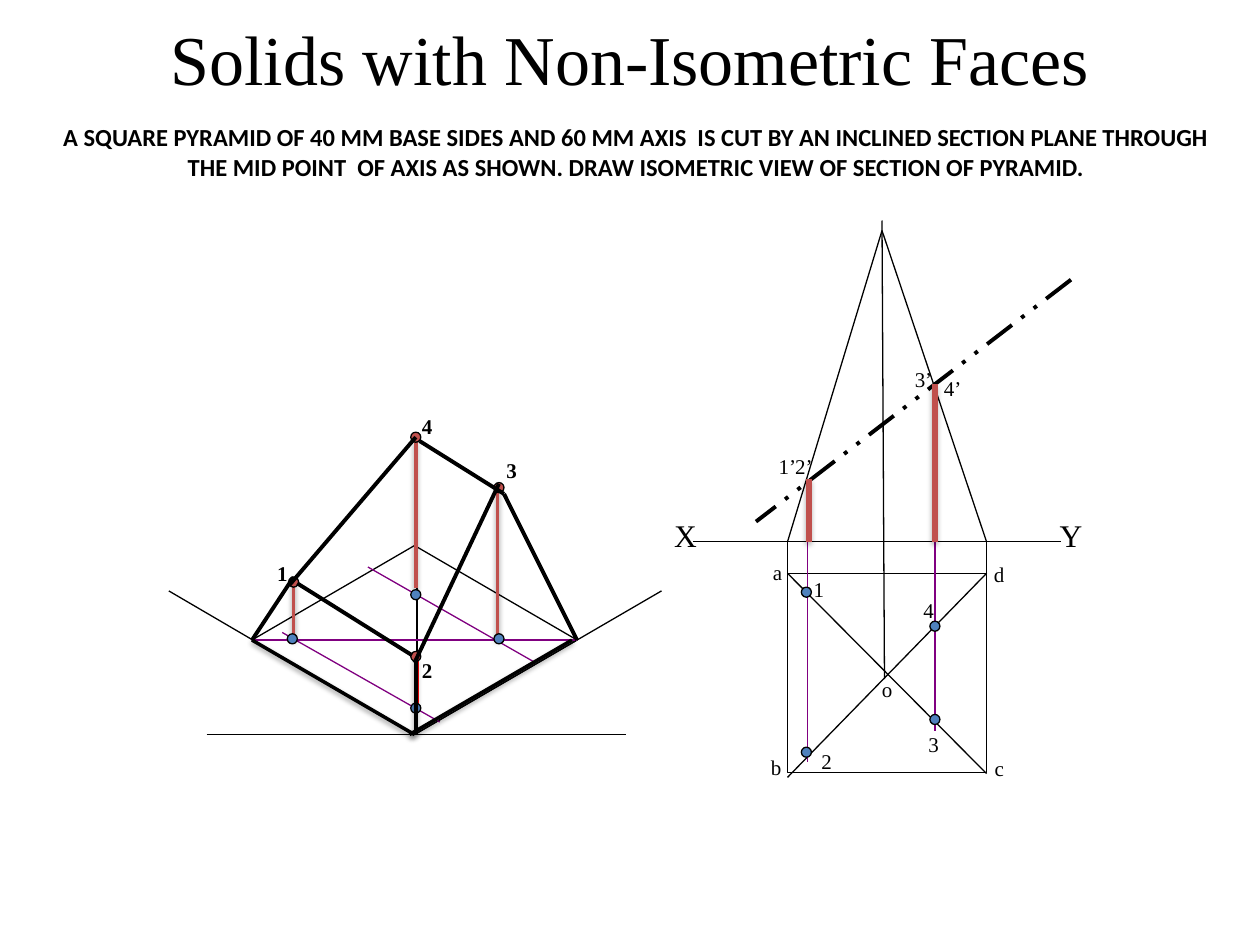
from lxml import etree
from pptx import Presentation
from pptx.dml.color import RGBColor
from pptx.enum import dml, shapes, text
from pptx.oxml.ns import qn
from pptx.util import Inches, Pt

colour = RGBColor.from_string
BLACK, WHITE, PURPLE, RED, BLUE = "000000", "FFFFFF", "800080", "C0504D", "4F81BD"
SERIF = "Times New Roman"

deck = Presentation()
deck.slide_width, deck.slide_height = Inches(10), Inches(7.5)
page = deck.slides.add_slide(deck.slide_layouts[5])


def draw_line(ends, hue=BLACK, width=0.75, shadow=None):
    """Draw a straight line; shadow is (opacity %, blur pt, distance pt)."""
    line = page.shapes.add_connector(
        shapes.MSO_CONNECTOR.STRAIGHT, *[Inches(value) for value in ends])
    line.line.color.rgb = colour(hue)
    line.line.width = Pt(width)
    effects = etree.SubElement(line._element.spPr, qn("a:effectLst"))
    if shadow:
        opacity, blur, distance = shadow
        outer = etree.SubElement(
            effects, qn("a:outerShdw"), blurRad=str(Pt(blur)),
            dist=str(Pt(distance)), dir="5400000", rotWithShape="0")
        black = etree.SubElement(outer, qn("a:srgbClr"), val=BLACK)
        etree.SubElement(black, qn("a:alpha"), val=str(opacity * 1000))
    return line


def write(words, left, top, width, height, size=12, bold=False, wrap=False, font=SERIF):
    box = page.shapes.add_textbox(*[Inches(value) for value in (left, top, width, height)])
    frame = box.text_frame
    frame.word_wrap = wrap
    frame.auto_size = text.MSO_AUTO_SIZE.SHAPE_TO_FIT_TEXT
    para = frame.paragraphs[0]
    para.text = words
    para.alignment = text.PP_ALIGN.CENTER
    para.font.name, para.font.size, para.font.bold = font, Pt(size), bold
    para.font.color.rgb = colour(BLACK)


# Title and problem statement
title = page.shapes.title
title.left, title.top, title.width, title.height = [
    Inches(value) for value in (0.5, 0.08, 9, 0.75)]
title.text_frame.text = "Solids with Non-Isometric Faces"
heading = title.text_frame.paragraphs[0]
heading.alignment = text.PP_ALIGN.CENTER
heading.font.name, heading.font.size = SERIF, Pt(40)
heading.font.color.rgb = colour(BLACK)
write("A SQUARE PYRAMID OF 40 MM BASE SIDES AND 60 MM AXIS  IS CUT BY AN INCLINED "
      "SECTION PLANE THROUGH THE MID POINT  OF AXIS AS SHOWN. DRAW ISOMETRIC VIEW "
      "OF SECTION OF PYRAMID.",
      0.33, 0.92, 9.44, 0.57, size=14, bold=True, wrap=True, font="Calibri")

# Bases: isometric rhombus and square plan
for kind, *place in [
    (shapes.MSO_SHAPE.DIAMOND, 2, 4.33, 2.58, 1.5),
    (shapes.MSO_SHAPE.RECTANGLE, 6.25, 4.55, 1.58, 1.58),
]:
    base = page.shapes.add_shape(kind, *[Inches(value) for value in place])
    base.shadow.inherit = False
    base.fill.solid()
    base.fill.fore_color.rgb = colour(WHITE)
    base.line.color.rgb = colour(BLACK)
    base.line.width = Pt(0.75)

# Thin construction lines
for ends in [
    # Projectors, plan diagonals, axis, elevation edges, XY line
    (6.25, 4.97, 6.25, 4.3), (7.83, 4.89, 7.83, 4.3),
    (7.83, 4.55, 6.25, 6.17), (6.25, 4.55, 7.83, 6.14),
    (7.02, 5.39, 7, 1.75), (7, 1.83, 6.25, 4.3), (7, 1.83, 7.83, 4.3),
    (5.5, 4.3, 8.42, 4.3),
    # Isometric axes and ground line
    (3.29, 5.83, 5.25, 4.69), (3.29, 5.83, 1.34, 4.69),
    (3.31, 3.5, 3.31, 5.83), (1.64, 5.83, 4.97, 5.83),
]:
    draw_line(ends)

# Section plane
plane = draw_line((8.5, 2.22, 6, 4.14), width=2.25)
plane.line.dash_style = dml.MSO_LINE.DASH_DOT_DOT

# Purple locating lines, in plan and on the isometric base
for ends in [
    (6.41, 3.8, 6.41, 6.05), (7.42, 3.05, 7.42, 5.8),
    (2, 5.08, 4.58, 5.08), (2.24, 5.02, 3.49, 5.73), (2.92, 4.5, 4.25, 5.26),
]:
    draw_line(ends, PURPLE)

# Heights of the cut points: isometric, then elevation
draw_line((3.31, 5.17, 3.31, 5.58), "FF0000", 2.25)
for x, top, bottom in [(2.33, 4.58, 5.08), (3.95, 3.83, 5.08), (3.3, 3.5, 4.67)]:
    draw_line((x, top, x, bottom), RED, 2, (38, 3.1, 1.6))
for x, top in [(6.42, 3.8), (7.42, 3.05)]:
    draw_line((x, top, x, 4.3), RED, 3, (35, 3.1, 1.8))

# Points: blue on the base, red on the cut
points = {
    BLUE: [(6.36, 4.66), (6.36, 5.93), (7.38, 4.93), (7.38, 5.67),
           (2.28, 5.03), (3.26, 5.58), (3.92, 5.03), (3.26, 4.68)],
    RED: [(3.26, 5.17), (2.29, 4.58), (3.26, 3.43), (3.92, 3.83)],
}
for hue, places in points.items():
    for left, top in places:
        dot = page.shapes.add_shape(shapes.MSO_SHAPE.OVAL, Inches(left), Inches(top),
                                    Inches(0.08), Inches(0.08))
        dot.shadow.inherit = False
        dot.fill.solid()
        dot.fill.fore_color.rgb = colour(hue)
        dot.line.color.rgb = colour(BLACK)
        dot.line.width = Pt(0.75)

# Bold outline of the cut pyramid
for ends in [
    (3.96, 3.84, 3.29, 5.26), (3.3, 3.47, 2.3, 4.64), (3.33, 3.5, 4, 3.92),
    (2.36, 4.63, 3.27, 5.2), (4, 3.92, 4.58, 5.08), (2.33, 4.58, 2, 5.08),
]:
    draw_line(ends, width=2.25)
for ends in [(3.25, 5.83, 4.54, 5.08), (3.29, 5.83, 2, 5.08), (3.3, 5.23, 3.3, 5.82)]:
    draw_line(ends, BLACK, 2, (38, 3.1, 1.6))

# Labels: plan, elevation, XY line, isometric view
for words, left, top in [
    ("a", 6.03, 4.39), ("b", 6.02, 5.94), ("c", 7.79, 5.95), ("d", 7.79, 4.41),
    ("1", 6.36, 4.53), ("2", 6.42, 5.89), ("3", 7.27, 5.76), ("4", 7.23, 4.69),
    ("o", 6.9, 5.32),
]:
    write(words, left, top, 0.28, 0.3)
for words, left, top in [
    ("1’", 6.08, 3.55), ("2’", 6.21, 3.55), ("3’", 7.16, 2.86), ("4’", 7.39, 2.93),
]:
    write(words, left, top, 0.34, 0.3)
for words, left in [("X", 5.25), ("Y", 8.31)]:
    write(words, left, 4.05, 0.38, 0.4, size=18)
for words, left, top in [("1", 2.1, 4.4), ("2", 3.25, 5.17), ("3", 3.92, 3.58), ("4", 3.25, 3.23)]:
    write(words, left, top, 0.28, 0.3, bold=True)

deck.save("out.pptx")
